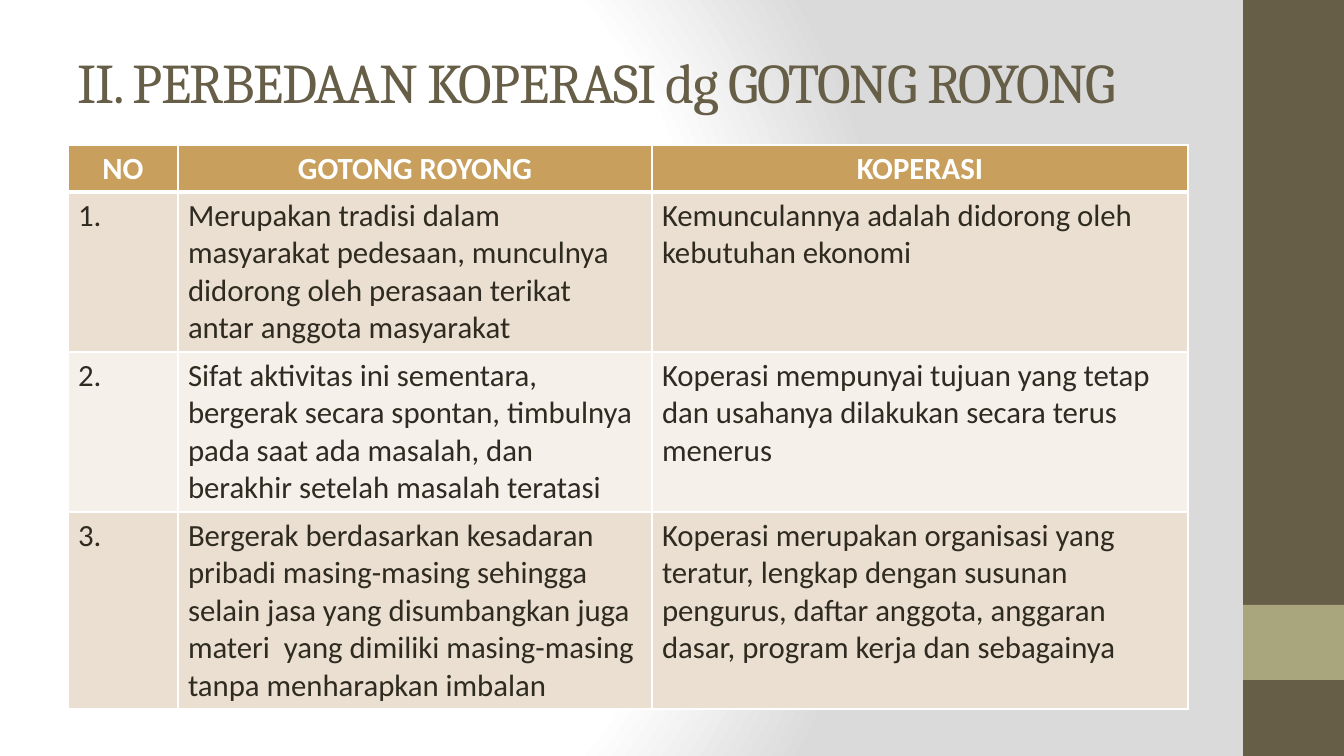
from lxml import etree
from pptx import Presentation
from pptx.dml.color import RGBColor
from pptx.enum.shapes import MSO_SHAPE
from pptx.enum.text import MSO_ANCHOR, PP_ALIGN
from pptx.oxml import parse_xml
from pptx.oxml.ns import nsdecls, qn
from pptx.util import Pt

RECTANGLE = MSO_SHAPE.RECTANGLE
MIDDLE = MSO_ANCHOR.MIDDLE
CENTER, LEFT = PP_ALIGN.CENTER, PP_ALIGN.LEFT

PX = 12192000 / 1344
COLORS = {
    "olive": "675E47", "sage": "A9A57C", "white": "FFFFFF", "grey": "DADADA",
    "header": "C89F5D", "odd_row": "EBDFD2", "even_row": "F5F0EA", "ink": "2F2B20",
}


def px(*lengths):
    """Turn pixel lengths into a list of EMU values."""
    return [round(length * PX) for length in lengths]


def add_text(paragraph, text, font, size, color, bold=False):
    run = paragraph.add_run()
    run.text = text
    run.font.name = font
    run.font.size = Pt(size)
    run.font.bold = bold
    run.font.color.rgb = RGBColor.from_string(COLORS[color])
    return run


prs = Presentation()
prs.slide_width, prs.slide_height = px(1344, 756)
slide = prs.slides.add_slide(prs.slide_layouts[6])

# Background: radial gradient
slide.background.fill.gradient()
linear = next(slide.element.iter(qn("a:gradFill")))
stops = "".join(
    f'<a:gs pos="{position * 1000}"><a:srgbClr val="{COLORS[color]}"/></a:gs>'
    for position, color in [(0, "white"), (75, "white"), (100, "grey")]
)
radial = parse_xml(
    f'<a:gradFill {nsdecls("a")} rotWithShape="1"><a:gsLst>{stops}</a:gsLst>'
    '<a:path path="circle"><a:fillToRect l="20000" t="50000" r="100000" b="50000"/>'
    "</a:path></a:gradFill>"
)
linear.getparent().replace(linear, radial)

# Side band and its accent
for top, height, color in [(0, 756, "olive"), (605, 75, "sage")]:
    band = slide.shapes.add_shape(RECTANGLE, *px(1243, top, 101, height))
    band.shadow.inherit = False
    band.fill.solid()
    band.fill.fore_color.rgb = RGBColor.from_string(COLORS[color])
    band.line.fill.background()

# Title
title = slide.shapes.add_textbox(*px(68, 30, 1120, 103)).text_frame
title.word_wrap = True
title.vertical_anchor = MIDDLE
heading = add_text(title.paragraphs[0], "II. PERBEDAAN KOPERASI dg GOTONG ROYONG",
                   "Cambria", 40, "olive")
heading.font._element.set("spc", "-100")

# Comparison table
ROWS = [
    ("NO", "GOTONG ROYONG", "KOPERASI"),
    ("1.",
     "Merupakan tradisi dalam masyarakat pedesaan, munculnya didorong oleh "
     "perasaan terikat antar anggota masyarakat",
     "Kemunculannya adalah didorong oleh kebutuhan ekonomi"),
    ("2.",
     "Sifat aktivitas ini sementara, bergerak secara spontan, timbulnya pada "
     "saat ada masalah, dan berakhir setelah masalah teratasi",
     "Koperasi mempunyai tujuan yang tetap dan usahanya dilakukan secara terus "
     "menerus"),
    ("3.",
     "Bergerak berdasarkan kesadaran pribadi masing-masing sehingga selain jasa "
     "yang disumbangkan juga materi  yang dimiliki masing-masing tanpa "
     "menharapkan imbalan",
     "Koperasi merupakan organisasi yang teratur, lengkap dengan susunan "
     "pengurus, daftar anggota, anggaran dasar, program kerja dan sebagainya"),
]
COLUMN_WIDTHS = [110, 474, 536]
ROW_HEIGHTS = [47, 160, 160, 197]

comparison = slide.shapes.add_table(
    len(ROWS), len(COLUMN_WIDTHS),
    *px(68, 145, sum(COLUMN_WIDTHS), sum(ROW_HEIGHTS))).table
for column, width in zip(comparison.columns, px(*COLUMN_WIDTHS)):
    column.width = width
for row, height in zip(comparison.rows, px(*ROW_HEIGHTS)):
    row.height = height

for r, entries in enumerate(ROWS):
    is_header = r == 0
    row_fill = "header" if is_header else ("odd_row" if r % 2 else "even_row")
    # The rule under the header is thicker than the other borders
    border_widths = {"lnL": 1, "lnR": 1, "lnT": 3 if r == 1 else 1,
                     "lnB": 3 if is_header else 1}
    for c, entry in enumerate(entries):
        cell = comparison.cell(r, c)
        paragraph = cell.text_frame.paragraphs[0]
        paragraph.alignment = CENTER if is_header else LEFT
        add_text(paragraph, entry, "Calibri", 22,
                 "white" if is_header else "ink", is_header)
        properties = cell._tc.get_or_add_tcPr()
        for side, width in border_widths.items():
            border = etree.SubElement(properties, qn(f"a:{side}"), w=str(Pt(width)))
            solid = etree.SubElement(border, qn("a:solidFill"))
            etree.SubElement(solid, qn("a:srgbClr"), val=COLORS["white"])
        cell.fill.solid()
        cell.fill.fore_color.rgb = RGBColor.from_string(COLORS[row_fill])

prs.save("out.pptx")
